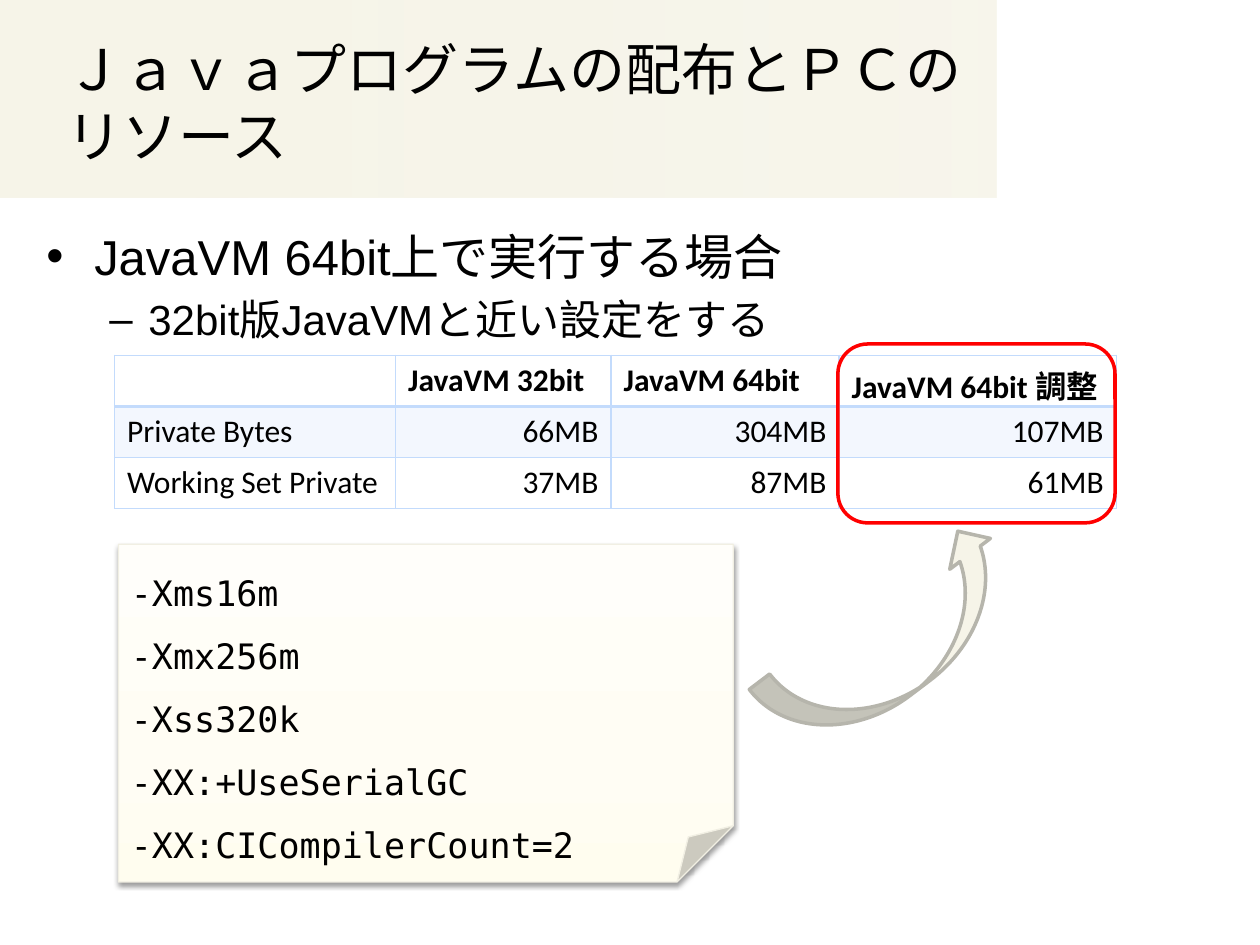
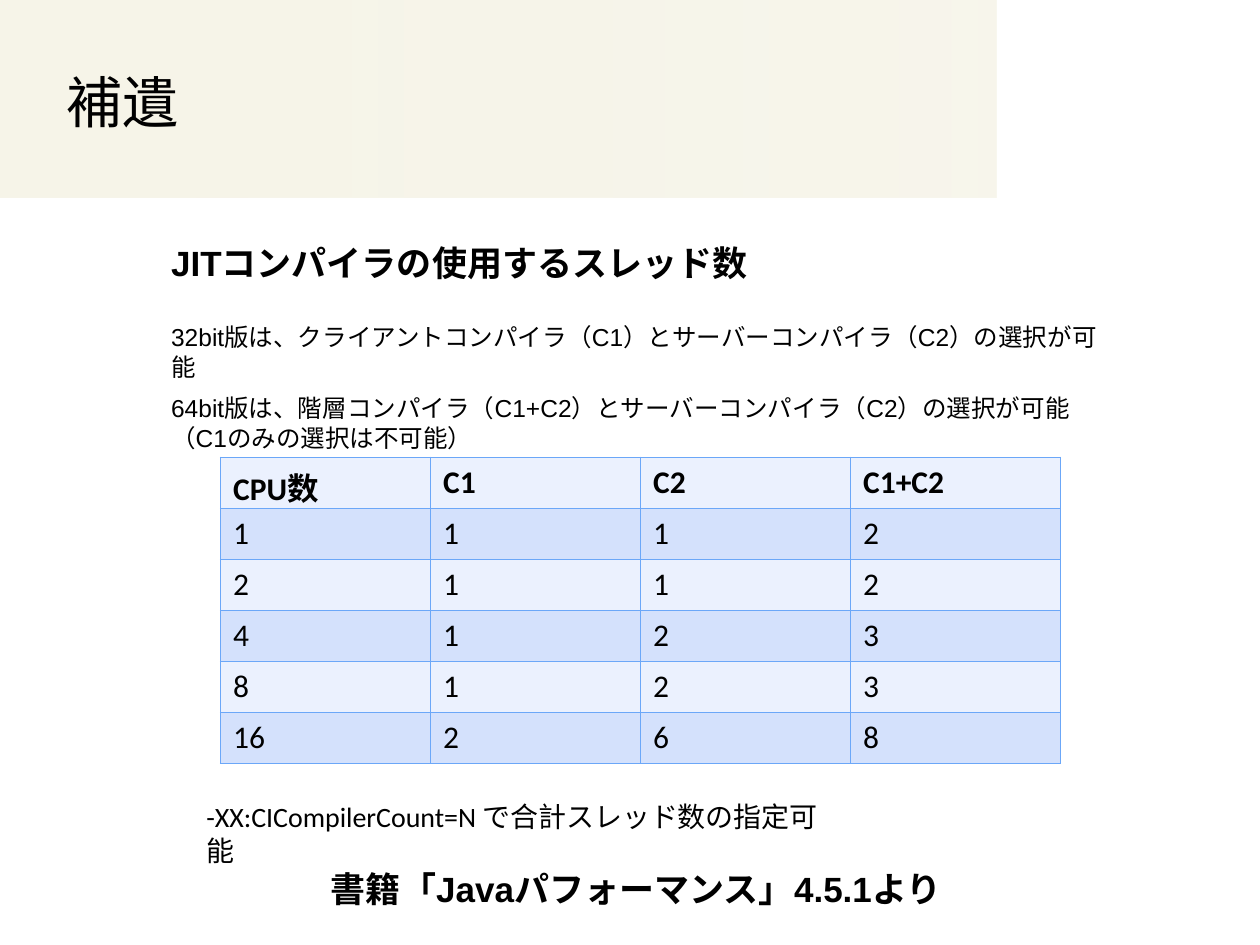
from dataclasses import dataclass
from typing import Optional

from lxml import etree
from pptx import Presentation
from pptx.dml.color import RGBColor
from pptx.enum.shapes import MSO_SHAPE
from pptx.enum.text import MSO_ANCHOR, PP_ALIGN
from pptx.oxml.ns import qn
from pptx.util import Inches, Pt

# Slide grid: 100 columns by 75 rows
SLIDE_W, SLIDE_H = Inches(10), Inches(7.5)
COLUMN, ROW = SLIDE_W // 100, SLIDE_H // 75

LEFT, CENTER, RIGHT = PP_ALIGN.LEFT, PP_ALIGN.CENTER, PP_ALIGN.RIGHT
TOP, MIDDLE = MSO_ANCHOR.TOP, MSO_ANCHOR.MIDDLE
RECTANGLE, ROUNDED = MSO_SHAPE.RECTANGLE, MSO_SHAPE.ROUNDED_RECTANGLE
FOLDED_NOTE, CURVED_ARROW = MSO_SHAPE.FOLDED_CORNER, MSO_SHAPE.CURVED_UP_ARROW

BLACK = RGBColor(0x00, 0x00, 0x00)
CREAM = RGBColor(0xF6, 0xF4, 0xE8)
NOTE_BOTTOM = RGBColor(0xFF, 0xFD, 0xEF)
NOTE_MIDDLE = RGBColor(0xFF, 0xFD, 0xF4)
NOTE_TOP = RGBColor(0xFF, 0xFE, 0xFA)
NOTE_EDGE = RGBColor(0xF1, 0xEF, 0xE3)
HIGHLIGHT = RGBColor(0xFF, 0x00, 0x00)
ARROW_EDGE = RGBColor(0xB6, 0xB5, 0xAC)
PALE_BLUE = RGBColor(0xC3, 0xDB, 0xFC)
STRONG_BLUE = RGBColor(0x6B, 0xA7, 0xF8)
LIGHT_BAND = RGBColor(0xEB, 0xF1, 0xFE)
DARK_BAND = RGBColor(0xD4, 0xE1, 0xFC)

HEADING_FONT, TABLE_FONT, CODE_FONT = "Arial", "Calibri", "DejaVu Sans Mono"


@dataclass(frozen=True)
class Area:
    """A place on the grid, in columns and rows."""
    col: float
    row: float
    cols: float
    rows: float

    def emu(self) -> tuple[int, int, int, int]:
        return (int(self.col * COLUMN), int(self.row * ROW),
                int(self.cols * COLUMN), int(self.rows * ROW))


@dataclass(frozen=True)
class Stop:
    percent: int
    color: RGBColor
    opacity: int = 100


@dataclass(frozen=True)
class TableLook:
    border: RGBColor
    header_rule: float
    odd_fill: RGBColor
    even_fill: Optional[RGBColor] = None
    odd_opacity: int = 100
    number_align: PP_ALIGN = LEFT


TITLE_BAND = Area(0, 0, 79.1, 15.7)
TITLE = Area(4.3, 3, 73.2, 10.1)
BAND_STOPS = (Stop(0, CREAM, 80), Stop(0, CREAM), Stop(100, CREAM, 85))
NOTE_STOPS = (Stop(0, NOTE_BOTTOM), Stop(35, NOTE_MIDDLE), Stop(100, NOTE_TOP))
TABLE_ROW = 4.05
HEADER_RIGHT_MARGIN = 0.2  # narrow, so that each header stays on one line

MEMORY_LOOK = TableLook(PALE_BLUE, 2, PALE_BLUE, odd_opacity=20, number_align=RIGHT)
THREAD_LOOK = TableLook(STRONG_BLUE, 1, DARK_BAND, LIGHT_BAND)

MEMORY_USE = (
    ("", "JavaVM 32bit", "JavaVM 64bit", "JavaVM 64bit 調整"),
    ("Private Bytes", "66MB", "304MB", "107MB"),
    ("Working Set Private", "37MB", "87MB", "61MB"),
)
THREAD_COUNTS = (
    ("CPU数", "C1", "C2", "C1+C2"),
    ("1", "1", "1", "2"),
    ("2", "1", "1", "2"),
    ("4", "1", "2", "3"),
    ("8", "1", "2", "3"),
    ("16", "2", "6", "8"),
)
VM_OPTIONS = ("-Xms16m", "-Xmx256m", "-Xss320k", "-XX:+UseSerialGC",
              "-XX:CICompilerCount=2")
COMPILER_CHOICES = (
    "32bit版は、クライアントコンパイラ（C1）とサーバーコンパイラ（C2）の選択が可能",
    "64bit版は、階層コンパイラ（C1+C2）とサーバーコンパイラ（C2）の選択が可能"
    "（C1のみの選択は不可能）",
)


# Text
def write(frame, text: str, *, size: float, font: str = HEADING_FONT,
          bold: bool = False, align: PP_ALIGN = LEFT, line: float = 1,
          before: float = 0, bullet: str = "", margin: float = 0,
          hanging: float = 0) -> None:
    """Add a paragraph; before is a share of the text size."""
    first = not frame.text
    paragraph = frame.paragraphs[0] if first else frame.add_paragraph()
    paragraph.alignment = align
    paragraph.line_spacing = line
    paragraph.space_before = Pt(0 if first else before * size)
    if bullet:
        props = paragraph._p.get_or_add_pPr()
        props.set("marL", str(int(margin * COLUMN)))
        props.set("indent", str(int(-hanging * COLUMN)))
        etree.SubElement(props, qn("a:buFont"), typeface=HEADING_FONT)
        etree.SubElement(props, qn("a:buChar"), char=bullet)
    run = paragraph.add_run()
    run.text = text
    run.font.size, run.font.name, run.font.bold = Pt(size), font, bold
    run.font.color.rgb = BLACK


def text_area(slide, area: Area, anchor: MSO_ANCHOR = TOP):
    frame = slide.shapes.add_textbox(*area.emu()).text_frame
    frame.word_wrap = True
    frame.vertical_anchor = anchor
    return frame


# Fills and shapes
def add_color(parent, color: RGBColor, opacity: int = 100) -> None:
    node = etree.SubElement(parent, qn("a:srgbClr"), val=str(color))
    if opacity < 100:
        etree.SubElement(node, qn("a:alpha"), val=str(opacity * 1000))


def fill_gradient(shape, stops: tuple[Stop, ...], angle: float) -> None:
    shape.fill.gradient()
    shape.fill.gradient_angle = angle
    stop_list = shape._element.spPr.find(qn("a:gradFill")).find(qn("a:gsLst"))
    for old in list(stop_list):
        stop_list.remove(old)
    for stop in stops:
        node = etree.SubElement(stop_list, qn("a:gs"), pos=str(stop.percent * 1000))
        add_color(node, stop.color, stop.opacity)


def add_figure(slide, kind: MSO_SHAPE, area: Area, *, fill: Optional[RGBColor] = None,
               edge: Optional[RGBColor] = None, width: float = 2, turn: float = 0):
    shape = slide.shapes.add_shape(kind, *area.emu())
    shape.shadow.inherit = False
    shape.rotation = turn
    if fill is None:
        shape.fill.background()
    else:
        shape.fill.solid()
        shape.fill.fore_color.rgb = fill
    if edge is None:
        shape.line.fill.background()
    else:
        shape.line.color.rgb = edge
        shape.line.width = Pt(width)
    return shape


def drop_shadow(shape, blur: float, distance: float, opacity: int) -> None:
    effects = shape._element.spPr.find(qn("a:effectLst"))
    shadow = etree.SubElement(effects, qn("a:outerShdw"), blurRad=str(Pt(blur)),
                              dist=str(Pt(distance)), dir="5400000", rotWithShape="0")
    add_color(shadow, BLACK, opacity)


# Tables
def style_cell(cell, look: TableLook, row: int) -> None:
    """Set the fill and the four borders of a cell."""
    color = look.odd_fill if row % 2 else look.even_fill
    if color is None:
        cell.fill.background()
    else:
        cell.fill.solid()
        cell.fill.fore_color.rgb = color
    if row == 0:
        cell.margin_right = int(HEADER_RIGHT_MARGIN * COLUMN)
    props = cell._tc.get_or_add_tcPr()
    if row % 2 and look.odd_opacity < 100:
        shade = props.find(qn("a:solidFill")).find(qn("a:srgbClr"))
        etree.SubElement(shade, qn("a:alpha"), val=str(look.odd_opacity * 1000))
    for position, side in enumerate("LRTB"):
        ruled = (row, side) in ((0, "B"), (1, "T"))
        border = etree.Element(qn(f"a:ln{side}"),
                               w=str(Pt(look.header_rule if ruled else 1)))
        add_color(etree.SubElement(border, qn("a:solidFill")), look.border)
        props.insert(position, border)


def add_data_table(slide, col: float, row: float, widths: tuple[float, ...],
                   data: tuple[tuple[str, ...], ...], look: TableLook) -> None:
    area = Area(col, row, sum(widths), TABLE_ROW * len(data))
    table = slide.shapes.add_table(len(data), len(widths), *area.emu()).table
    table.first_row = table.horz_banding = False
    for column, width in zip(table.columns, widths):
        column.width = int(width * COLUMN)
    for r, record in enumerate(data):
        table.rows[r].height = int(TABLE_ROW * ROW)
        for c, value in enumerate(record):
            cell = table.cell(r, c)
            style_cell(cell, look, r)
            if value:
                write(cell.text_frame, value, size=18, font=TABLE_FONT, bold=r == 0,
                      align=look.number_align if r and c else LEFT)


# Slides
def titled_slide(deck, title: str):
    slide = deck.slides.add_slide(deck.slide_layouts[6])
    band = add_figure(slide, RECTANGLE, TITLE_BAND)
    fill_gradient(band, BAND_STOPS, 0)
    write(text_area(slide, TITLE, MIDDLE), title, size=32)
    return slide


def resources_slide(deck) -> None:
    slide = titled_slide(deck, "Ｊａｖａプログラムの配布とＰＣのリソース")
    points = text_area(slide, Area(2.7, 17.5, 90, 41.3))
    write(points, "JavaVM 64bit上で実行する場合", size=28, bullet="•",
          margin=3.8, hanging=3.8)
    write(points, "32bit版JavaVMと近い設定をする", size=24, before=0.2, bullet="–",
          margin=8.1, hanging=3.1)

    # Note with the VM options
    note = add_figure(slide, FOLDED_NOTE, Area(9.4, 43.2, 48.8, 26.8),
                      edge=NOTE_EDGE, width=0.75)
    fill_gradient(note, NOTE_STOPS, 90)
    drop_shadow(note, blur=3.1, distance=1.6, opacity=38)
    note.text_frame.word_wrap = True
    note.text_frame.vertical_anchor = TOP
    for option in VM_OPTIONS:
        write(note.text_frame, option, size=20, font=CODE_FONT, line=1.5)

    # Memory use, with the tuned column marked
    add_data_table(slide, 9.1, 28.2, (22.3, 17.1, 18.1, 22), MEMORY_USE, MEMORY_LOOK)
    add_figure(slide, ROUNDED, Area(66.5, 27.3, 22, 14.2), edge=HIGHLIGHT)
    add_figure(slide, CURVED_ARROW, Area(59.6, 47, 22.8, 8.1), fill=CREAM,
               edge=ARROW_EDGE, turn=322.8)


def appendix_slide(deck) -> None:
    slide = titled_slide(deck, "補遺")
    write(text_area(slide, Area(12.6, 18.7, 76, 4.4)),
          "JITコンパイラの使用するスレッド数", size=20, bold=True)
    write(text_area(slide, Area(11.3, 68.7, 78.4, 4)),
          "書籍「Javaパフォーマンス」4.5.1より", size=20, bold=True,
          align=CENTER, line=0.9)
    choices = text_area(slide, Area(12.6, 25.1, 75.7, 9.3))
    for choice in COMPILER_CHOICES:
        write(choices, choice, size=14, before=0.5)
    add_data_table(slide, 17.5, 36.3, (16.67,) * 4, THREAD_COUNTS, THREAD_LOOK)
    write(text_area(slide, Area(15.4, 63, 51.4, 3.7)),
          "-XX:CICompilerCount=N で合計スレッド数の指定可能", size=16, font=TABLE_FONT)


def main() -> None:
    deck = Presentation()
    deck.slide_width, deck.slide_height = SLIDE_W, SLIDE_H
    resources_slide(deck)
    appendix_slide(deck)
    deck.save("out.pptx")


if __name__ == "__main__":
    main()
